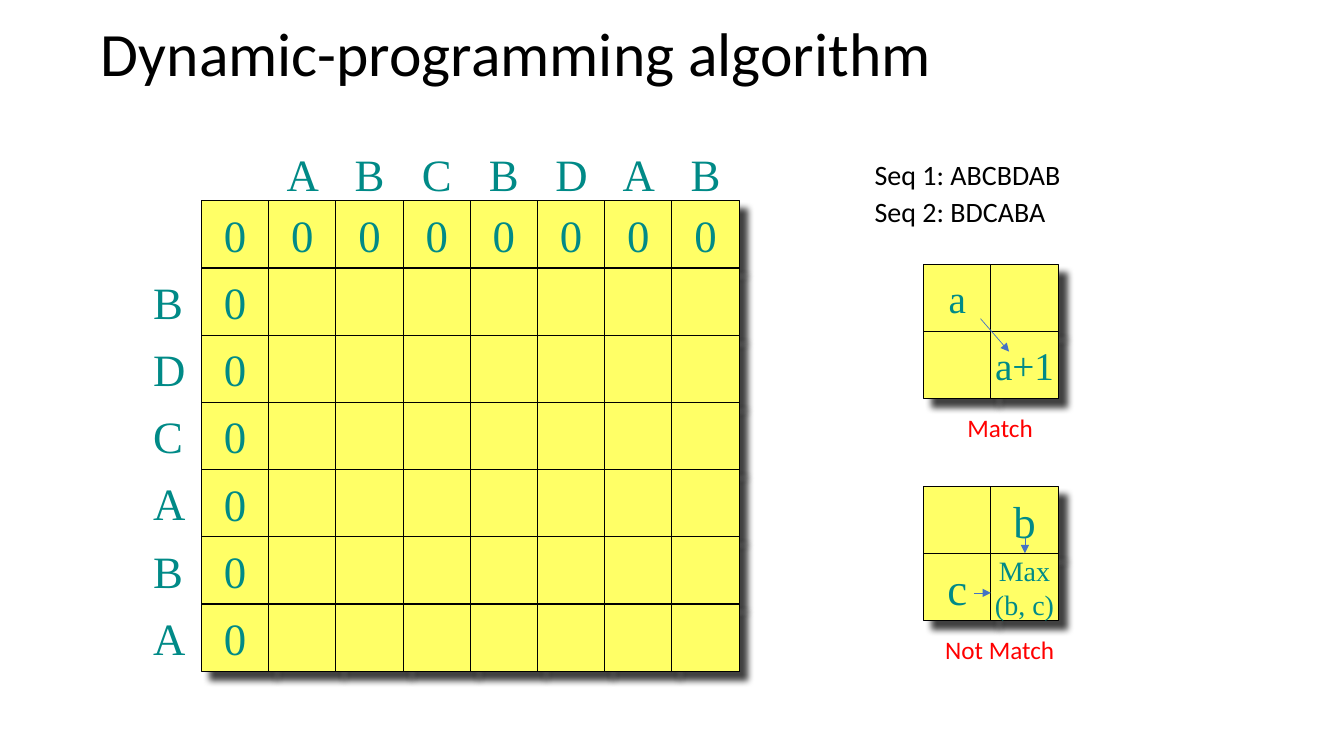
from dataclasses import dataclass

from lxml.etree import SubElement
from pptx import Presentation
from pptx.dml.color import RGBColor
from pptx.enum.shapes import MSO_CONNECTOR, MSO_SHAPE
from pptx.enum.text import MSO_ANCHOR, MSO_AUTO_SIZE, PP_ALIGN
from pptx.oxml.ns import qn
from pptx.shapes.autoshape import Shape
from pptx.slide import Slide
from pptx.text.text import TextFrame
from pptx.util import Cm, Pt


@dataclass(frozen=True)
class Theme:
    ink: str = "000000"
    letter: str = "008A87"
    cell: str = "FFFF66"
    arrow: str = "4472C4"
    caption: str = "FF0000"
    sans: str = "Calibri"
    serif: str = "Times New Roman"
    title_size: float = 44
    letter_size: float = 32
    score_size: float = 28
    small_size: float = 20
    caption_size: float = 18
    cell_line: float = 0.75
    arrow_line: float = 0.5


THEME = Theme()


@dataclass(frozen=True)
class Style:
    font: str
    size: float
    color: str
    align: PP_ALIGN = PP_ALIGN.LEFT


TITLE = Style(THEME.sans, THEME.title_size, THEME.ink)
SEQUENCE = Style(THEME.sans, THEME.small_size, THEME.ink)
CAPTION = Style(THEME.sans, THEME.caption_size, THEME.caption)
ROW_LETTER = Style(THEME.serif, THEME.letter_size, THEME.letter)
LETTER = Style(THEME.serif, THEME.letter_size, THEME.letter, PP_ALIGN.CENTER)
SCORE = Style(THEME.serif, THEME.score_size, THEME.letter, PP_ALIGN.CENTER)
FORMULA = Style(THEME.serif, THEME.small_size, THEME.letter, PP_ALIGN.CENTER)


# All positions below are in centimetres
@dataclass(frozen=True)
class Entry:
    text: str
    style: Style = LETTER


@dataclass(frozen=True)
class Grid:
    left: float
    top: float
    rows: int
    columns: int
    entries: dict[tuple[int, int], Entry]


@dataclass(frozen=True)
class Label:
    text: str
    left: float
    top: float
    width: float
    height: float
    style: Style


@dataclass(frozen=True)
class Arrow:
    x1: float
    y1: float
    x2: float
    y2: float


CELL = 5.08 / 3
COLUMN_SEQUENCE = "ABCBDAB"
ROW_SEQUENCE = "BDCABA"
ROWS, COLUMNS = len(ROW_SEQUENCE) + 1, len(COLUMN_SEQUENCE) + 1

# Scoring matrix: zeros in the first row and column
MATRIX = Grid(5.08, 5.06, ROWS, COLUMNS, {
    (row, column): Entry("0")
    for row in range(ROWS) for column in range(COLUMNS)
    if row == 0 or column == 0
})
MATCH = Grid(23.28, 6.66, 2, 2, {
    (0, 0): Entry("a", SCORE),
    (1, 1): Entry("a+1", SCORE),
})
NOT_MATCH = Grid(23.28, 12.26, 2, 2, {
    (0, 1): Entry("b"),
    (1, 0): Entry("c"),
    (1, 1): Entry("Max\n(b, c)", FORMULA),
})

COLUMN_LABELS = [
    Label(letter, MATRIX.left + column * CELL + 0.2, 3.58, CELL - 0.4, 1.6, LETTER)
    for column, letter in enumerate(COLUMN_SEQUENCE, start=1)
]
ROW_LABELS = [
    Label(letter, 3.61, MATRIX.top + row * CELL + 0.04, 1.3, 1.6, ROW_LETTER)
    for row, letter in enumerate(ROW_SEQUENCE, start=1)
]
SIDE_LABELS = [
    Label("Match", 24.13, 10.26, 2.18, 1.02, CAPTION),
    Label("Not Match", 23.57, 15.85, 3.3, 1.02, CAPTION),
    Label(f"Seq 1: {COLUMN_SEQUENCE}", 21.79, 3.84, 5.23, 1.12, SEQUENCE),
    Label(f"Seq 2: {ROW_SEQUENCE}", 21.79, 4.78, 4.85, 1.12, SEQUENCE),
]
ARROWS = [
    Arrow(24.71, 8.03, 25.43, 8.86),
    Arrow(25.83, 13.56, 25.83, 13.94),
    Arrow(24.54, 14.94, 24.97, 14.94),
]


def write(frame: TextFrame, text: str, style: Style) -> None:
    frame.text = text
    for paragraph in frame.paragraphs:
        paragraph.alignment = style.align
        paragraph.font.name = style.font
        paragraph.font.size = Pt(style.size)
        paragraph.font.color.rgb = RGBColor.from_string(style.color)


def add_cell_shadow(cell: Shape) -> None:
    cell.shadow.inherit = False
    effects = cell.element.spPr.find(qn("a:effectLst"))
    shadow = SubElement(effects, qn("a:outerShdw"), blurRad=str(Pt(5)),
                        dist=str(Pt(8.5)), dir=str(45 * 60000),
                        algn="ctr", rotWithShape="0")
    color = SubElement(shadow, qn("a:srgbClr"), val=THEME.ink)
    SubElement(color, qn("a:alpha"), val="75000")


def draw_grid(slide: Slide, grid: Grid) -> None:
    for row in range(grid.rows):
        for column in range(grid.columns):
            cell = slide.shapes.add_shape(
                MSO_SHAPE.RECTANGLE, Cm(grid.left + column * CELL),
                Cm(grid.top + row * CELL), Cm(CELL), Cm(CELL))
            cell.fill.solid()
            cell.fill.fore_color.rgb = RGBColor.from_string(THEME.cell)
            cell.line.color.rgb = RGBColor.from_string(THEME.ink)
            cell.line.width = Pt(THEME.cell_line)
            add_cell_shadow(cell)
            if entry := grid.entries.get((row, column)):
                cell.text_frame.word_wrap = False
                cell.text_frame.vertical_anchor = MSO_ANCHOR.MIDDLE
                write(cell.text_frame, entry.text, entry.style)


def draw_label(slide: Slide, label: Label) -> None:
    frame = slide.shapes.add_textbox(Cm(label.left), Cm(label.top),
                                     Cm(label.width), Cm(label.height)).text_frame
    frame.word_wrap = False
    frame.auto_size = MSO_AUTO_SIZE.SHAPE_TO_FIT_TEXT
    write(frame, label.text, label.style)


def draw_arrow(slide: Slide, arrow: Arrow) -> None:
    connector = slide.shapes.add_connector(
        MSO_CONNECTOR.STRAIGHT, Cm(arrow.x1), Cm(arrow.y1), Cm(arrow.x2), Cm(arrow.y2))
    connector.line.color.rgb = RGBColor.from_string(THEME.arrow)
    connector.line.width = Pt(THEME.arrow_line)
    properties = connector.element.spPr
    SubElement(properties.find(qn("a:ln")), qn("a:tailEnd"), type="triangle")
    SubElement(properties, qn("a:effectLst"))


def draw_title(slide: Slide, text: str) -> None:
    title = slide.shapes.title
    title.left, title.top, title.width, title.height = Cm(2.29), Cm(0.25), Cm(29.21), Cm(2.36)
    frame = title.text_frame
    frame.auto_size = MSO_AUTO_SIZE.NONE
    frame.vertical_anchor = MSO_ANCHOR.MIDDLE
    write(frame, text, TITLE)
    frame.paragraphs[0].line_spacing = 0.9


def main() -> None:
    deck = Presentation()
    deck.slide_width, deck.slide_height = Cm(33.87), Cm(19.05)
    slide = deck.slides.add_slide(deck.slide_layouts.get_by_name("Title Only"))
    draw_title(slide, "Dynamic-programming algorithm")
    for grid in (MATRIX, MATCH, NOT_MATCH):
        draw_grid(slide, grid)
    for arrow in ARROWS:
        draw_arrow(slide, arrow)
    for label in COLUMN_LABELS + ROW_LABELS + SIDE_LABELS:
        draw_label(slide, label)
    deck.save("out.pptx")


if __name__ == "__main__":
    main()
